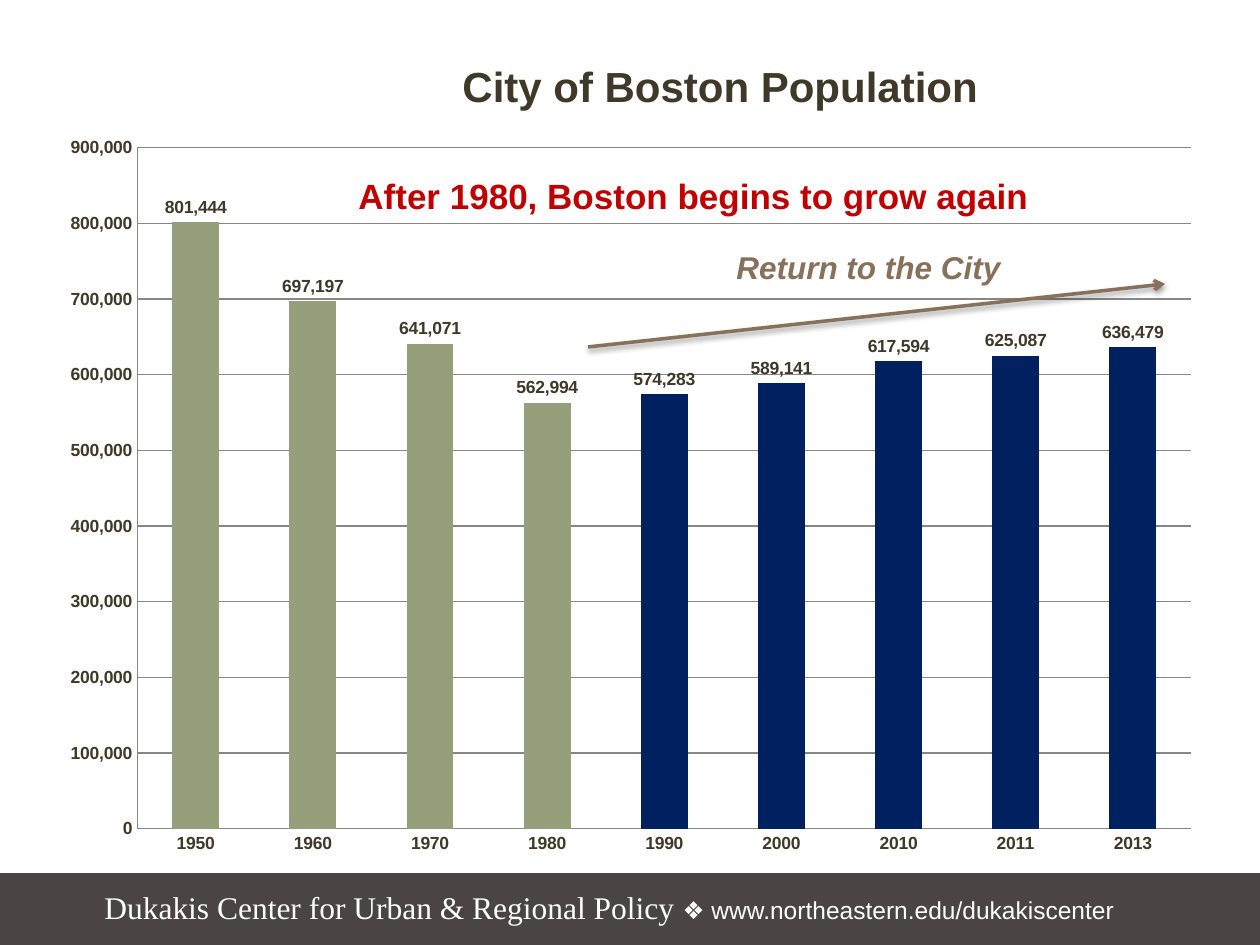
from lxml.etree import fromstring
from pptx import Presentation
from pptx.chart.data import CategoryChartData
from pptx.dml.color import RGBColor
from pptx.enum.chart import XL_CHART_TYPE as Kind, XL_LABEL_POSITION as Spot
from pptx.enum.chart import XL_TICK_MARK as Tick
from pptx.enum.shapes import MSO_CONNECTOR as Conn, MSO_SHAPE as Shape
from pptx.enum.text import MSO_ANCHOR as Anchor
from pptx.oxml.ns import nsdecls, qn
from pptx.util import Pt

PX = 914400 // 126
INK, GRID, BAND = "3F3929", "878787", "4B4444"
TAN, RED, WHITE = "88715A", "C00000", "FFFFFF"
SAGE, NAVY = "95A07B", "002060"
DATA = {
    "1950": 801444, "1960": 697197, "1970": 641071,
    "1980": 562994, "1990": 574283, "2000": 589141,
    "2010": 617594, "2011": 625087, "2013": 636479,
}


def px(*vals):
    return [val * PX for val in vals]


def rgb(code):
    return RGBColor.from_string(code)


def style(font, size, color, name="Arial", bold=False, italic=False):
    font.size, font.name = Pt(size), name
    font.bold, font.italic = bold, italic
    font.color.rgb = rgb(color)


def write(frame, text, **form):
    run = frame.paragraphs[0].add_run()
    run.text = text
    style(run.font, **form)


def label(slide, box, wrap=False):
    frame = slide.shapes.add_textbox(*px(*box)).text_frame
    frame.word_wrap = wrap
    return frame


def footer(slide, box):
    x, y, w, h = box
    band = slide.shapes.add_shape(Shape.RECTANGLE, *px(*box))
    band.shadow.inherit = False
    band.fill.solid()
    band.fill.fore_color.rgb = band.line.color.rgb = rgb(BAND)
    band.line.width = Pt(0.75)
    frame = label(slide, (x + 93, y + 8, w - 190, 50), wrap=True)
    frame.vertical_anchor = Anchor.TOP
    write(frame, "Dukakis Center for Urban & Regional Policy ",
          size=18, color=WHITE, name="Times New Roman")
    write(frame, "❖ www.northeastern.edu/dukakiscenter", size=14, color=WHITE)


def place(node, index, inner="", **spots):
    for old in node.findall(qn("c:layout")):
        node.remove(old)
    modes = "".join(f'<c:{key}Mode val="edge"/>' for key in "xy")
    vals = "".join(f'<c:{key} val="{val}"/>' for key, val in spots.items())
    node.insert(index, fromstring(
        f'<c:layout {nsdecls("c")}><c:manualLayout>{inner}{modes}{vals}'
        "</c:manualLayout></c:layout>"))


def trim(line):
    line.color.rgb = rgb(GRID)
    line.width = Pt(0.75)


def bars(slide, box):
    data = CategoryChartData(number_format="#,##0")
    data.categories = list(DATA)
    data.add_series("Population", list(DATA.values()))
    chart = slide.shapes.add_chart(
        Kind.COLUMN_CLUSTERED, *px(*box), data).chart
    style(chart.font, 10, INK, bold=True)
    chart.has_legend = False
    chart.has_title = True
    title = chart.chart_title
    write(title.text_frame, "City of Boston Population",
          size=24, color=INK, bold=True)
    place(title._element, 1, x=0.395, y=0.077)
    plot = chart.plots[0]
    place(plot._element.getparent(), 0, '<c:layoutTarget val="inner"/>',
          x=0.204, y=0.174, w=0.634, h=0.685)
    plot.gap_width = 150
    plot.vary_by_categories = False
    plot.has_data_labels = True
    tags = plot.data_labels
    tags.show_value = True
    tags.number_format, tags.number_format_is_linked = "#,##0", False
    tags.position = Spot.OUTSIDE_END
    style(tags.font, 10, INK, bold=True)
    for i, year in enumerate(DATA):
        fill = plot.series[0].points[i].format.fill
        fill.solid()
        fill.fore_color.rgb = rgb(SAGE if year <= "1980" else NAVY)
    years, scale = chart.category_axis, chart.value_axis
    for axis in (years, scale):
        axis.major_tick_mark = axis.minor_tick_mark = Tick.NONE
        trim(axis.format.line)
        style(axis.tick_labels.font, 10, INK, bold=True)
    scale.minimum_scale, scale.maximum_scale = 0, 900000
    scale.major_unit = 100000
    scale.tick_labels.number_format = "#,##0"
    scale.tick_labels.number_format_is_linked = False
    scale.has_major_gridlines = True
    trim(scale.major_gridlines.format.line)


def trend(slide, box):
    x, y, w, h = box
    arrow = slide.shapes.add_connector(
        Conn.STRAIGHT, *px(x, y + h, x + w, y))
    arrow.line.color.rgb = rgb(TAN)
    arrow.line.width = Pt(2)
    arrow.line._get_or_add_ln().append(
        fromstring(f'<a:tailEnd {nsdecls("a")} type="arrow"/>'))
    arrow._element.spPr.append(fromstring(
        f'<a:effectLst {nsdecls("a")}><a:outerShdw blurRad="40000" '
        'dist="20000" dir="5400000" rotWithShape="0">'
        '<a:srgbClr val="000000"><a:alpha val="38000"/></a:srgbClr>'
        "</a:outerShdw></a:effectLst>"))


def notes(slide, box):
    x, y, w, h = box
    write(label(slide, (x + 378, y + 74, 292, 50)), "Return to the City",
          size=18, color=TAN, bold=True, italic=True)
    trend(slide, (x + 242, y + 116, 577, 63))
    write(label(slide, (x, y, 701, 55)),
          "After 1980, Boston begins to grow again",
          size=20, color=RED, bold=True)


def main():
    deck = Presentation()
    deck.slide_width, deck.slide_height = px(1260, 945)
    slide = deck.slides.add_slide(deck.slide_layouts[6])
    footer(slide, (-1, 874, 1265, 73))
    bars(slide, (-202, -25, 1663, 994))
    notes(slide, (346, 168, 819, 179))
    deck.save("out.pptx")


if __name__ == "__main__":
    main()
